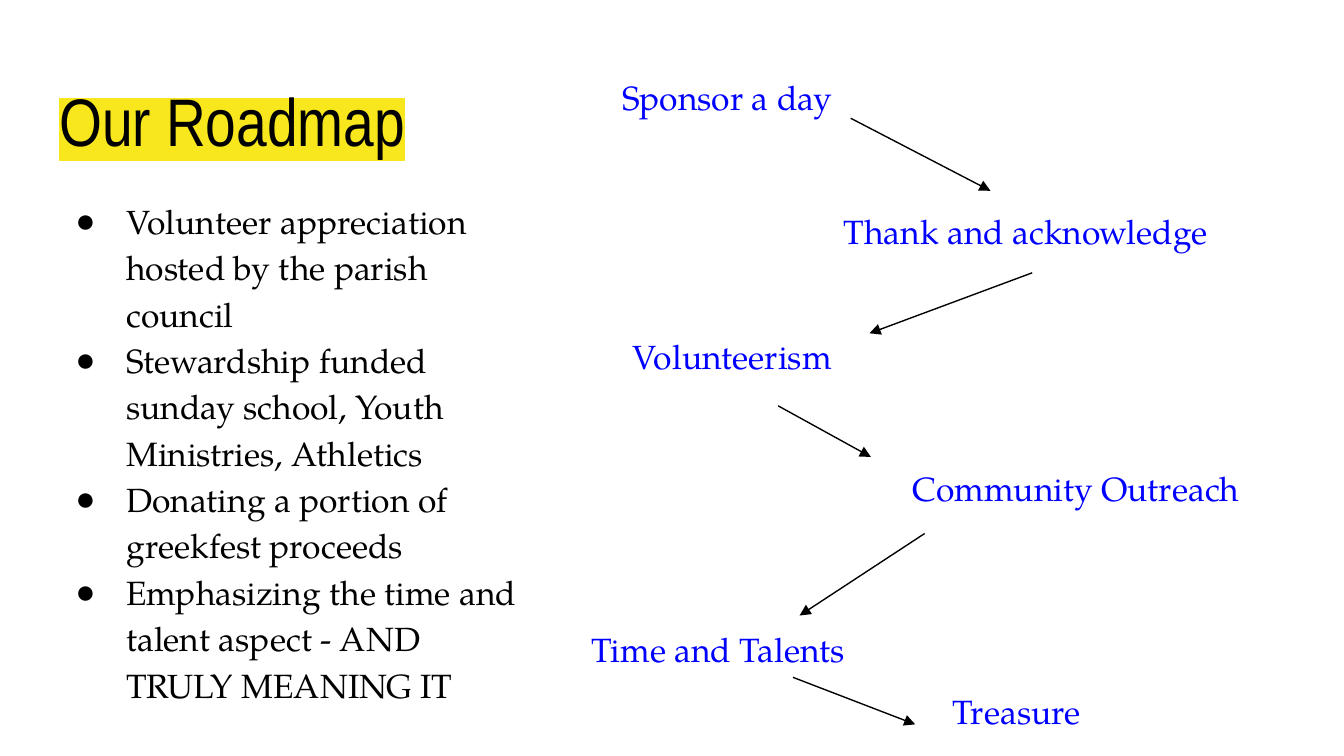
from lxml import etree
from pptx import Presentation
from pptx.dml.color import RGBColor
from pptx.enum import shapes, text
from pptx.oxml.ns import qn
from pptx.util import Inches, Pt

BLACK = RGBColor(0x00, 0x00, 0x00)
BLUE = RGBColor(0x00, 0x00, 0xFF)
YELLOW = RGBColor(0xF8, 0xE7, 0x1C)
HEADING_FONT = "Arial Narrow"
BODY_FONT = "TeX Gyre Pagella"

GOALS = [
    "Volunteer appreciation hosted by the parish council",
    "Stewardship funded sunday school, Youth Ministries, Athletics",
    "Donating a portion of greekfest proceeds",
    "Emphasizing the time and talent aspect - AND TRULY MEANING IT",
]
# Step label and its box, relative to the roadmap region
STEPS = [
    ("Sponsor a day", (0.23, 0, 2.05, 0.63)),
    ("Thank and acknowledge", (1.88, 1, 2.99, 0.56)),
    ("Volunteerism", (0.31, 1.93, 2.83, 0.58)),
    ("Community Outreach", (2.39, 2.91, 2.83, 0.58)),
    ("Time and Talents", (0, 4.11, 2.83, 0.58)),
    ("Treasure", (2.69, 4.57, 2.83, 0.58)),
]
# Start and end of the arrow from each step to the next
ARROWS = [
    ((2.03, 0.41), (3.07, 0.95)),
    ((3.38, 1.56), (2.17, 2.01)),
    ((1.49, 2.55), (2.18, 2.93)),
    ((2.58, 3.5), (1.65, 4.11)),
    ((1.6, 4.57), (2.51, 4.92)),
]


def place(shape, box):
    shape.left, shape.top, shape.width, shape.height = map(Inches, box)


def write(shape, lines, size=18, font=BODY_FONT, color=BLACK, spacing=1.0, highlight=None):
    frame = shape.text_frame
    frame.word_wrap = True
    frame.auto_size = text.MSO_AUTO_SIZE.NONE
    frame.vertical_anchor = text.MSO_ANCHOR.TOP
    frame.margin_left = frame.margin_right = Inches(0.1)
    frame.margin_top = frame.margin_bottom = Inches(0.1)
    for index, line in enumerate(lines):
        paragraph = frame.add_paragraph() if index else frame.paragraphs[0]
        paragraph.alignment = text.PP_ALIGN.LEFT
        paragraph.line_spacing = spacing
        paragraph.space_before = Pt(0)
        run = paragraph.add_run()
        run.text = line
        run.font.size = Pt(size)
        run.font.name = font
        run.font.color.rgb = color
        if highlight is not None:
            mark = etree.Element(qn("a:highlight"))
            etree.SubElement(mark, qn("a:srgbClr"), val=str(highlight))
            run.font._element.find(qn("a:solidFill")).addnext(mark)


def add_bullet(paragraph, color):
    properties = paragraph._p.get_or_add_pPr()
    properties.set("marL", str(Inches(0.5)))
    properties.set("indent", str(Inches(-0.38)))
    bullet_color = etree.SubElement(properties, qn("a:buClr"))
    etree.SubElement(bullet_color, qn("a:srgbClr"), val=str(color))
    etree.SubElement(properties, qn("a:buChar"), char="●")


def add_heading(slide, box):
    heading = slide.shapes.title
    place(heading, box)
    write(heading, ["Our Roadmap"], size=36, font=HEADING_FONT, highlight=YELLOW)


def add_goals(slide, box):
    goals = slide.placeholders[1]
    place(goals, box)
    write(goals, GOALS, spacing=1.15)
    for paragraph in goals.text_frame.paragraphs:
        add_bullet(paragraph, BLACK)


def add_arrow(slide, start, end):
    arrow = slide.shapes.add_connector(
        shapes.MSO_CONNECTOR.STRAIGHT, *map(Inches, start + end))
    arrow.line.color.rgb = BLACK
    arrow.line.width = Pt(0.75)
    etree.SubElement(arrow.line._get_or_add_ln(), qn("a:tailEnd"), type="triangle")
    etree.SubElement(arrow._element.spPr, qn("a:effectLst"))


def add_roadmap(slide, left, top):
    """Steps and the arrows between them, from the region's top left corner."""
    for label, (x, y, width, height) in STEPS:
        step = slide.shapes.add_textbox(0, 0, 0, 0)
        place(step, (left + x, top + y, width, height))
        write(step, [label], color=BLUE)
    for start, end in ARROWS:
        add_arrow(slide, *((left + x, top + y) for x, y in (start, end)))


def main():
    deck = Presentation()
    deck.slide_width = Inches(10)
    deck.slide_height = Inches(10 * 9 / 16)
    slide = deck.slides.add_slide(deck.slide_layouts[1])
    add_heading(slide, (0.34, 0.49, 9.32, 0.63))
    add_goals(slide, (0.34, 1.35, 3.65, 4.15))
    add_roadmap(slide, 4.3, 0.47)
    deck.save("out.pptx")


if __name__ == "__main__":
    main()
